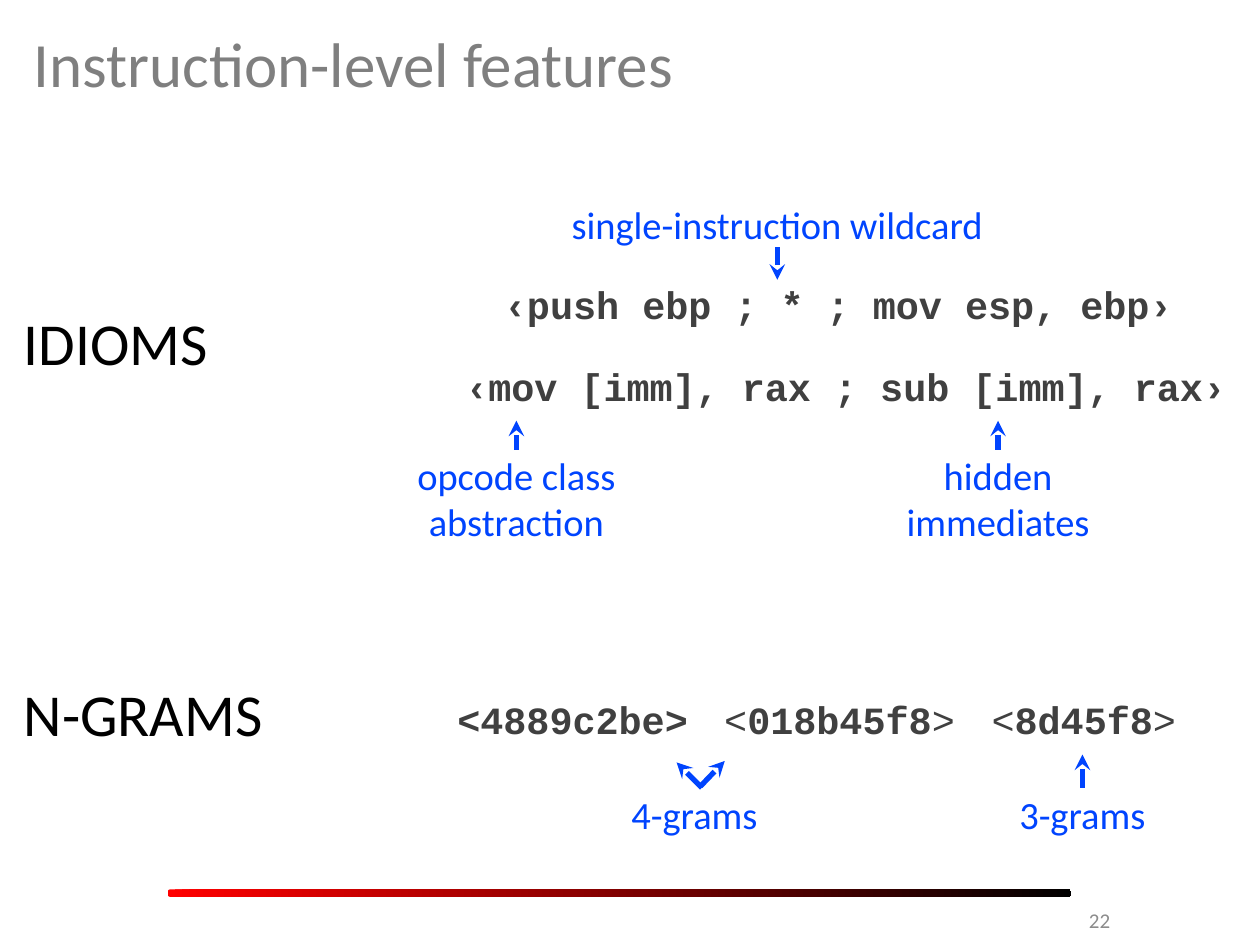
"""Build the slide on instruction-level features: idioms and n-grams."""
from lxml import etree
from pptx import Presentation
from pptx.dml.color import RGBColor
from pptx.enum.shapes import MSO_CONNECTOR, MSO_SHAPE
from pptx.enum.text import MSO_ANCHOR, PP_ALIGN
from pptx.oxml.ns import qn
from pptx.util import Cm, Pt

LEFT, CENTER, RIGHT = PP_ALIGN.LEFT, PP_ALIGN.CENTER, PP_ALIGN.RIGHT
TOP, MIDDLE = MSO_ANCHOR.TOP, MSO_ANCHOR.MIDDLE
STRAIGHT, ROUNDED = MSO_CONNECTOR.STRAIGHT, MSO_SHAPE.ROUNDED_RECTANGLE
BLUE, GREY, BLACK, RED = "0044FE", "404040", "000000", "FF0000"
SIDE_TOP, SIDE_BOTTOM = 0, 2

TITLE = "Instruction-level features"
PAGE = "22"
HEADINGS = [("IDIOMS", 6.17), ("N-GRAMS", 13.64)]
CODE = [
    (9.3, 7.24, 15.72, 0.08, [("‹mov [imm], rax ; sub [imm], rax›", True)]),
    (10.08, 5.59, 13.84, 0.08, [("‹push ebp ; * ; mov esp, ebp›", True)]),
    (9.12, 13.94, 4.93, 0.1, [("<4889c2be>", True)]),
    (14.5, 13.94, 4.93, 0.1, [("<", False), ("018b45f8", True), (">", False)]),
    (19.89, 13.94, 3.99, 0.1, [("<", False), ("8d45f8", True), (">", False)]),
]
LABELS = [
    ("single-instruction wildcard", 15.67, 4.04, 8.5, 0.94, 5.64),
    ("opcode class abstraction", 10.41, 9.07, 5.13, 1.93, 8.48),
    ("hidden immediates", 20.12, 9.07, 5.13, 1.93, 8.48),
    ("4-grams", 14, 15.88, 5.13, 1.07, None),
    ("3-grams", 21.82, 15.88, 5.13, 1.07, 15.21),
]
FORK = [((13.64, 15.37), (14.15, 15.88)), ((14.61, 15.34), (14.12, 15.85))]


def rgb(value):
    return RGBColor.from_string(value)


def add_text(shapes, box, runs, size, color, font="Calibri", align=LEFT,
             anchor=MIDDLE, inset=(0, 0)):
    sp = shapes.add_textbox(*map(Cm, box))
    tf = sp.text_frame
    tf.word_wrap = True
    tf.vertical_anchor = anchor
    tf.margin_left = tf.margin_right = Cm(inset[0])
    tf.margin_top = tf.margin_bottom = Cm(inset[1])
    p = tf.paragraphs[0]
    p.alignment = align
    for text, bold in runs:
        r = p.add_run()
        r.text = text
        r.font.name = font
        r.font.size = Pt(size)
        r.font.bold = bold
        r.font.color.rgb = rgb(color)
    return sp


def add_arrow(shapes, tip, tail):
    cxn = shapes.add_connector(STRAIGHT, *map(Cm, tip + tail))
    cxn.line.color.rgb = rgb(BLUE)
    cxn.line.width = Pt(3)
    etree.SubElement(cxn.line._get_or_add_ln(), qn("a:headEnd"), type="stealth")
    etree.SubElement(cxn._element.spPr, qn("a:effectLst"))
    return cxn


def add_label(shapes, text, x, top, width, height, tip_y):
    box = (x - width / 2, top, width, height)
    sp = add_text(shapes, box, [(text, False)], 22, BLUE, align=CENTER)
    if tip_y is not None:
        above = tip_y < top
        cxn = add_arrow(shapes, (x, tip_y), (x, top if above else top + height))
        cxn.end_connect(sp, SIDE_TOP if above else SIDE_BOTTOM)


def add_bar(shapes):
    sp = shapes.add_shape(ROUNDED, Cm(3.38), Cm(17.93), Cm(18.21), Cm(0.15))
    sp.adjustments[0] = 0.33
    sp.shadow.inherit = False
    sp.line.fill.background()
    sp.fill.gradient()
    sp.fill.gradient_angle = 0
    for stop, color in zip(sp.fill.gradient_stops, (RED, BLACK)):
        stop.color.rgb = rgb(color)


def main():
    prs = Presentation()
    prs.slide_width, prs.slide_height = Cm(25.4), Cm(19.05)
    shapes = prs.slides.add_slide(prs.slide_layouts[6]).shapes
    add_bar(shapes)
    add_text(shapes, (19.25, 18.03, 3.38, 1.02), [(PAGE, False)], 12, "8C8C8C",
             align=RIGHT, inset=(0.25, 0.13))
    add_text(shapes, (0.43, 0.2, 24.56, 2.11), [(TITLE, False)], 36, "7F7F7F",
             inset=(0.25, 0.13))
    for text, top in HEADINGS:
        add_text(shapes, (0.48, top, 5.26, 1.45), [(text, False)], 34, BLACK)
    for left, top, width, inset, runs in CODE:
        add_text(shapes, (left, top, width, 1.1), runs, 22, GREY, "Courier New",
                 anchor=TOP, inset=(inset, inset))
    for label in LABELS:
        add_label(shapes, *label)
    for tip, tail in FORK:
        add_arrow(shapes, tip, tail)
    prs.save("out.pptx")


if __name__ == "__main__":
    main()
